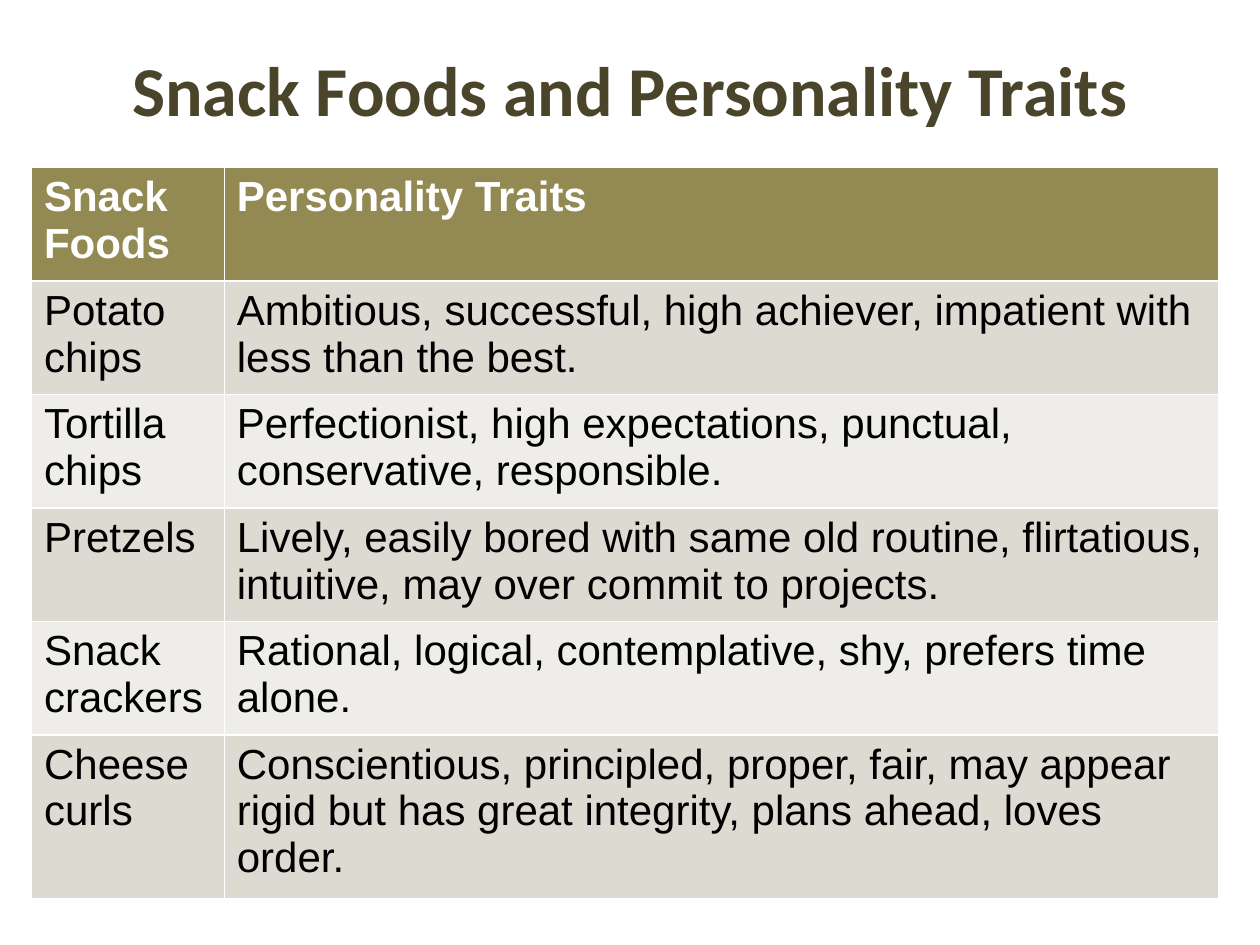
from pptx import Presentation
from pptx.dml.color import RGBColor
from pptx.enum.text import MSO_ANCHOR, PP_ALIGN
from pptx.util import Inches, Pt

HEADER = ("Snack Foods", "Personality Traits")
SNACKS = [
    ("Potato chips", "Ambitious, successful, high achiever, impatient with less than the best."),
    ("Tortilla chips", "Perfectionist, high expectations, punctual, conservative, responsible."),
    ("Pretzels", "Lively, easily bored with same old routine, flirtatious, intuitive, "
                 "may over commit to projects."),
    ("Snack crackers", "Rational, logical, contemplative, shy, prefers time alone."),
    ("Cheese curls", "Conscientious, principled, proper, fair, may appear rigid but has "
                     "great integrity, plans ahead, loves order."),
]
BANDS = ("DCDAD1", "EEEDE9")
COLS = (1.53, 7.89)
ROWS = (0.89,) * 5 + (1.28,)


def color(code):
    return RGBColor.from_string(code)


def style(para, name, size, code, bold):
    font = para.font
    font.name, font.size, font.bold = name, Pt(size), bold
    font.color.rgb = color(code)


def add_title(slide, left, top, width, height):
    box = slide.shapes.add_textbox(Inches(left), Inches(top), Inches(width), Inches(height))
    frame = box.text_frame
    frame.word_wrap = True
    frame.vertical_anchor = MSO_ANCHOR.MIDDLE
    para = frame.paragraphs[0]
    para.text = "Snack Foods and Personality Traits"
    para.alignment = PP_ALIGN.CENTER
    style(para, "Calibri", 40, "4A452A", True)


def fill_cell(cell, text, fill, ink, bold):
    cell.fill.solid()
    cell.fill.fore_color.rgb = color(fill)
    cell.text = text
    style(cell.text_frame.paragraphs[0], "Arial", 24, ink, bold)


def add_traits(slide, left, top):
    """The default table style supplies the white rules between cells."""
    table = slide.shapes.add_table(
        len(ROWS), len(COLS), Inches(left), Inches(top),
        Inches(sum(COLS)), Inches(sum(ROWS))).table
    for col, width in zip(table.columns, COLS):
        col.width = Inches(width)
    for row, height in zip(table.rows, ROWS):
        row.height = Inches(height)
    for cell, text in zip(table.rows[0].cells, HEADER):
        fill_cell(cell, text, "938953", "FFFFFF", True)
    for i, snack in enumerate(SNACKS):
        for cell, text in zip(table.rows[i + 1].cells, snack):
            fill_cell(cell, text, BANDS[i % 2], "000000", False)


def main():
    deck = Presentation()
    deck.slide_width, deck.slide_height = Inches(10), Inches(7.5)
    slide = deck.slides.add_slide(deck.slide_layouts[6])
    add_title(slide, 0.5, 0.08, 9, 1.25)
    add_traits(slide, 0.25, 1.33)
    deck.save("out.pptx")


if __name__ == "__main__":
    main()
